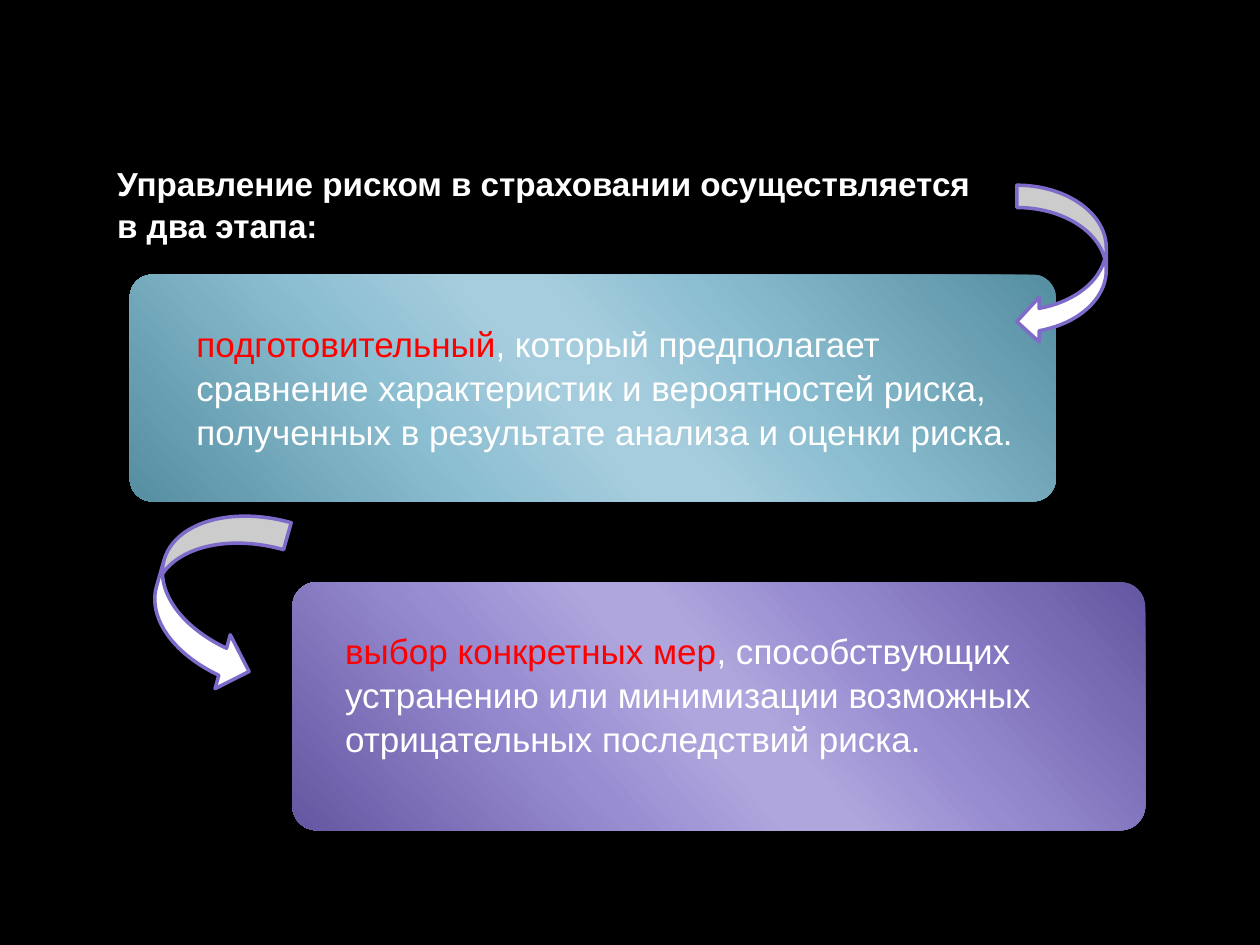
from lxml.etree import SubElement
from pptx import Presentation
from pptx.dml.color import RGBColor
from pptx.enum.shapes import MSO_SHAPE as Shape
from pptx.enum.text import MSO_ANCHOR as Anchor, MSO_AUTO_SIZE as AutoSize, PP_ALIGN as Align
from pptx.oxml.ns import qn
from pptx.util import Inches, Pt

SLIDE_WIDTH, SLIDE_HEIGHT = Inches(10), Inches(7.5)
COLUMN, ROW = SLIDE_WIDTH / 100, SLIDE_HEIGHT / 75
TEXT_TOP, TEXT_HEIGHT = 3.1, 11.1
STOPS = (0, 33, 47, 53, 68, 100)
TEAL = ("568EA1", "8CBED1", "A6CDDD", "A6CDDD", "8DBFD2", "568EA1")
VIOLET = ("6556A1", "988CD1", "AFA6DD", "AFA6DD", "998DD2", "6556A1")
WHITE, RED, BLACK, OUTLINE = "FFFFFF", "FF0000", "000000", "7E6BC9"


def color(value):
    """Turn a hex string into a colour."""
    return RGBColor.from_string(value)


def place(box):
    """Turn a box of grid columns and rows into slide lengths."""
    left, top, width, height = box
    return [int(n) for n in (left * COLUMN, top * ROW, width * COLUMN, height * ROW)]


def fill_gradient(shape, colors):
    """Fill a shape with a diagonal gradient of several stops."""
    shape.fill.gradient()
    shape.fill.gradient_angle = 221
    stops = shape._element.spPr.find(qn("a:gradFill")).find(qn("a:gsLst"))
    stops.clear()
    for position, value in zip(STOPS, colors):
        stop = SubElement(stops, qn("a:gs"), pos=str(position * 1000))
        SubElement(stop, qn("a:srgbClr"), val=value)


def write(shape, paragraphs, size, bold=False):
    """Write paragraphs of (text, colour) runs into a shape."""
    frame = shape.text_frame
    frame.word_wrap = True
    frame.auto_size = AutoSize.NONE
    frame.vertical_anchor = Anchor.TOP
    for index, runs in enumerate(paragraphs):
        paragraph = frame.add_paragraph() if index else frame.paragraphs[0]
        paragraph.alignment = Align.LEFT
        paragraph.line_spacing = 1.05
        paragraph.space_before = Pt(0)
        font = paragraph.font
        font.name, font.size, font.bold = "Arial", Pt(size), bold
        for text, value in runs:
            run = paragraph.add_run()
            run.text = text
            run.font.color.rgb = color(value)


def add_heading(slide, box, lines):
    """Place the slide title."""
    title = slide.shapes.title
    title.left, title.top, title.width, title.height = place(box)
    write(title, [[(line, WHITE)] for line in lines], 19, bold=True)


def add_stage(slide, box, colors, indent, text_width, term, rest):
    """Draw a rounded card with its highlighted term and explanation."""
    left, top, width, height = box
    card = slide.shapes.add_shape(Shape.ROUNDED_RECTANGLE, *place(box))
    card.adjustments[0] = 0.1
    card.shadow.inherit = False
    card.line.fill.background()
    fill_gradient(card, colors)
    text_box = (left + indent, top + TEXT_TOP, text_width, TEXT_HEIGHT)
    label = slide.shapes.add_textbox(*place(text_box))
    write(label, [[(term, RED), (rest, WHITE)]], 20)


def add_curved_arrow(slide, box, kind, rotation=0):
    """Draw a white curved arrow leading to a stage."""
    arrow = slide.shapes.add_shape(kind, *place(box))
    arrow.rotation = rotation
    arrow.shadow.inherit = False
    arrow.fill.solid()
    arrow.fill.fore_color.rgb = color(WHITE)
    arrow.line.color.rgb = color(OUTLINE)
    arrow.line.width = Pt(2)


def main():
    """Build and save the presentation."""
    presentation = Presentation()
    presentation.slide_width, presentation.slide_height = SLIDE_WIDTH, SLIDE_HEIGHT
    slide = presentation.slides.add_slide(presentation.slide_layouts[5])
    slide.background.fill.solid()
    slide.background.fill.fore_color.rgb = color(BLACK)
    add_heading(slide, (8.3, 12.3, 87.4, 7.4),
                ("Управление риском в страховании осуществляется", "в два этапа:"))
    add_stage(slide, (10.3, 21.8, 73.5, 18), TEAL, 4.3, 69.9, "подготовительный",
              ", который предполагает сравнение характеристик и вероятностей риска, "
              "полученных в результате анализа и оценки риска.")
    add_stage(slide, (23.2, 46.2, 67.7, 19.7), VIOLET, 3.2, 59.8, "выбор конкретных мер",
              ", способствующих устранению или минимизации возможных "
              "отрицательных последствий риска.")
    add_curved_arrow(slide, (80.7, 14.7, 7.1, 12.6), Shape.CURVED_LEFT_ARROW)
    add_curved_arrow(slide, (12.4, 40, 8.9, 14.5), Shape.CURVED_RIGHT_ARROW, 15.8)
    presentation.save("out.pptx")


if __name__ == "__main__":
    main()
